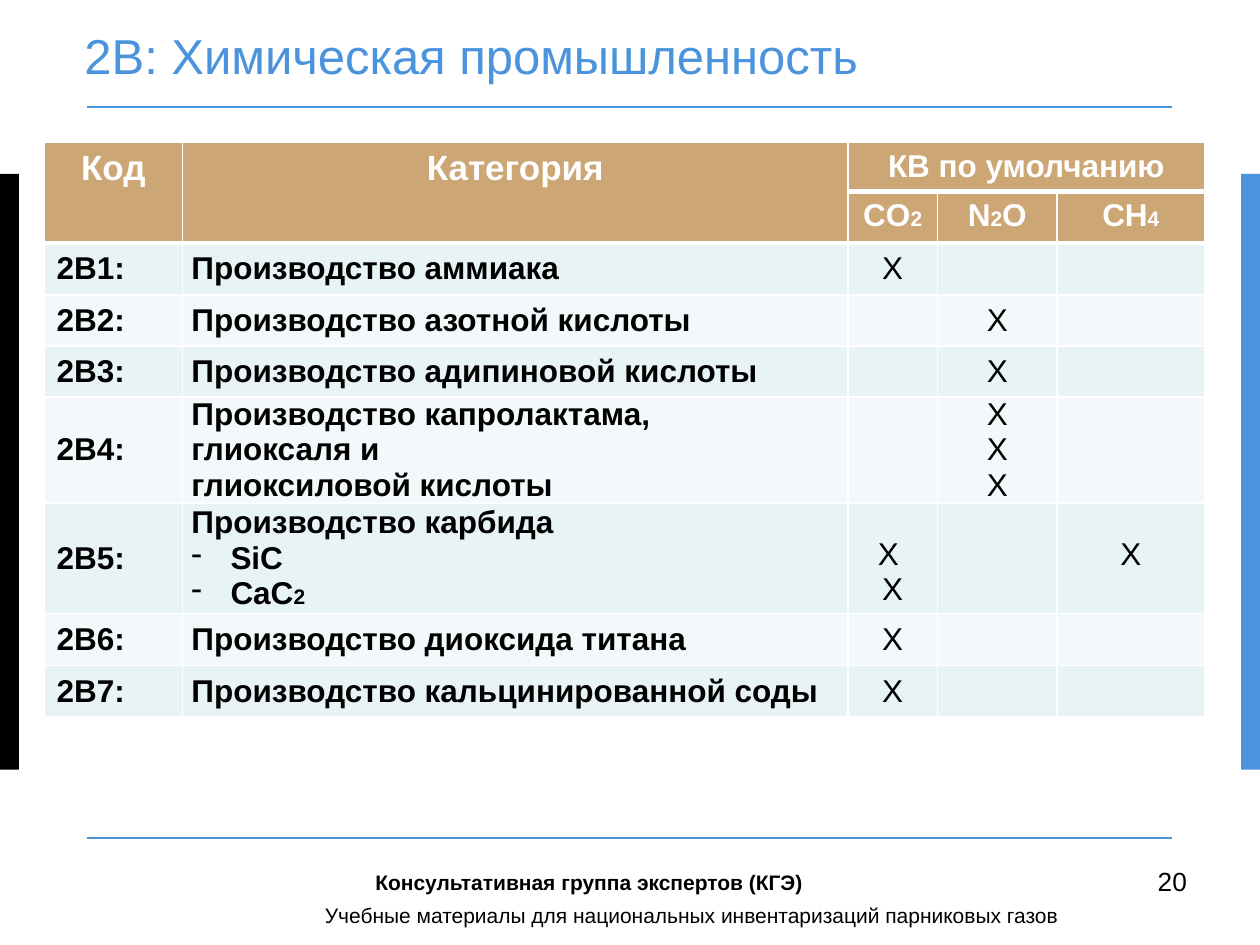
from dataclasses import dataclass

from lxml import etree
from pptx import Presentation
from pptx import util as u
from pptx.dml.color import RGBColor
from pptx.enum import shapes, text
from pptx.oxml.ns import qn


@dataclass(frozen=True)
class Theme:
    font: str = "Arial"
    blue: str = "4B93DC"
    black: str = "000000"
    white: str = "FFFFFF"
    head: str = "CCA674"
    bands: tuple = ("E7F3F4", "F3F9FA")
    title: int = 28
    label: int = 20
    body: int = 18
    number: int = 15
    small: int = 12


T = Theme()
W, H = u.Inches(10), u.Inches(7.5)
COL, ROW = W / 100, H / 75
LEFT, MID = text.PP_ALIGN.LEFT, text.PP_ALIGN.CENTER
TOP, MIDDLE = text.MSO_ANCHOR.TOP, text.MSO_ANCHOR.MIDDLE
WIDE = (0.1, 0.05, 0.1, 0.05)
TIGHT = (0.07, 0, 0.07, 0)

COLUMNS = (11, 52.8, 7.1, 9.5, 11.7)
ROWS = (3.9, 3.9, 4.1, 3.9, 4, 8.4, 8.8, 4.1, 4.1)
HEADER = (
    ("Код", "Категория", "КВ по умолчанию", "", ""),
    ("", "", "CO_2", "N_2_O", "CH_4"),
)
CATEGORIES = (
    ("2B1:", "Производство аммиака", "X", "", ""),
    ("2B2:", "Производство азотной кислоты", "", "X", ""),
    ("2B3:", "Производство адипиновой кислоты", "", "X", ""),
    ("2B4:", "Производство капролактама,\nглиоксаля и\nглиоксиловой кислоты",
     "", "X\nX\nX", ""),
    ("2B5:", "Производство карбида\n- SiC\n- CaC_2", "X \nX", "", "X"),
    ("2B6:", "Производство диоксида титана", "X", "", ""),
    ("2B7:", "Производство кальцинированной соды", "X", "", ""),
)
CARBIDE_INSETS = {2: (0.1, 0.22, 0.1, 0), 4: (0.07, 0.27, 0.07, 0)}


def place(box):
    x, y, w, h = box
    return [u.Emu(round(v)) for v in (x * COL, y * ROW, w * COL, h * ROW)]


def assign(obj, values):
    for name, value in values.items():
        setattr(obj, name, value)


def margins(insets):
    names = ("margin_left", "margin_top", "margin_right", "margin_bottom")
    return dict(zip(names, map(u.Inches, insets)))


def write(p, line, size, color, bold=False, align=LEFT):
    p.alignment = align
    for i, part in enumerate(line.split("_")):
        if part:
            r = p.add_run()
            r.text = part
            assign(r.font, {"name": T.font, "bold": bold,
                            "size": u.Pt(T.small if i % 2 else size)})
            r.font.color.rgb = RGBColor.from_string(color)


def bullet(p):
    pPr = p._p.get_or_add_pPr()
    pPr.set("marL", str(u.Inches(0.31)))
    pPr.set("indent", str(u.Inches(-0.31)))
    etree.SubElement(pPr, qn("a:buChar")).set("char", "-")


def border(cell, top, bottom):
    tcPr = cell._tc.get_or_add_tcPr()
    for side, width in (("L", 1), ("R", 1), ("T", top), ("B", bottom)):
        ln = etree.SubElement(tcPr, qn(f"a:ln{side}"), w=str(u.Pt(width)))
        fill = etree.SubElement(ln, qn("a:solidFill"))
        etree.SubElement(fill, qn("a:srgbClr"), val=T.white)


def fill_cell(cell, content, fill, insets, anchor, top, bottom, **style):
    border(cell, top, bottom)
    cell.fill.solid()
    cell.fill.fore_color.rgb = RGBColor.from_string(fill)
    assign(cell, {**margins(insets), "vertical_anchor": anchor})
    tf = cell.text_frame
    for i, line in enumerate(content.split("\n")):
        p = tf.add_paragraph() if i else tf.paragraphs[0]
        if line.startswith("- "):
            bullet(p)
            line = line[2:]
        write(p, line, **style)


def side_bar(s, box, color):
    sp = s.shapes.add_shape(shapes.MSO_SHAPE.RECTANGLE, *place(box))
    sp.shadow.inherit = False
    sp.fill.solid()
    sp.fill.fore_color.rgb = RGBColor.from_string(color)
    sp.line.fill.background()


def rule(s, box):
    x, y, w, h = place(box)
    ln = s.shapes.add_connector(shapes.MSO_CONNECTOR.STRAIGHT, x, y, x + w, y + h)
    ln.line.width = u.Pt(1)
    ln.line.color.rgb = RGBColor.from_string(T.blue)
    etree.SubElement(ln._element.spPr, qn("a:effectLst"))


def title(s, box, content):
    sp = s.shapes.title
    assign(sp, dict(zip(("left", "top", "width", "height"), place(box))))
    tf = sp.text_frame
    assign(tf, {**margins((0, 0, 0, 0)), "word_wrap": True,
                "vertical_anchor": MIDDLE, "auto_size": text.MSO_AUTO_SIZE.NONE})
    p = tf.paragraphs[0]
    p.line_spacing = u.Pt(15)
    write(p, content, T.title, T.blue)


def caption(s, box, content, size, bold=False):
    tf = s.shapes.add_textbox(*place(box)).text_frame
    tf.word_wrap = True
    write(tf.paragraphs[0], content, size, T.black, bold)


def category_table(s, box):
    x, y = box
    frame = s.shapes.add_table(len(ROWS), len(COLUMNS),
                               *place((x, y, sum(COLUMNS), sum(ROWS))))
    tbl = frame.table
    for column, width in zip(tbl.columns, COLUMNS):
        column.width = u.Emu(round(width * COL))
    for row, height in zip(tbl.rows, ROWS):
        row.height = u.Emu(round(height * ROW))
    for first, last in (((0, 0), (1, 0)), ((0, 1), (1, 1)), ((0, 2), (0, 4))):
        tbl.cell(*first).merge(tbl.cell(*last))

    for i, row in enumerate(HEADER):
        for j, content in enumerate(row):
            size = T.label if j < 2 else T.body
            fill_cell(tbl.cell(i, j), content, T.head, WIDE, TOP, 3 if i else 1, 3,
                      size=size, color=T.white, bold=True, align=MID)

    for i, row in enumerate(CATEGORIES):
        for j, content in enumerate(row):
            insets = WIDE if j in (0, 2) else TIGHT
            anchor = MIDDLE
            if row[0] == "2B5:":
                insets = CARBIDE_INSETS.get(j, insets)
                anchor = TOP if j == 4 else MIDDLE
            fill_cell(tbl.cell(i + len(HEADER), j), content, T.bands[i % 2],
                      insets, anchor, 1 if i else 3, 1, size=T.body,
                      color=T.black, bold=j < 2, align=LEFT if j < 2 else MID)


def frame_slide(s):
    side_bar(s, (0, 13.8, 1.5, 47.3), T.black)
    side_bar(s, (98.5, 13.8, 1.5, 47.3), T.blue)
    for y in (8.5, 66.5):
        rule(s, (6.9, y, 86.1, 0))


def footer(s, box):
    x, y = box
    caption(s, (x + 66.1, y, 4.7, 3.5), "20", T.number)
    caption(s, (x, y + 2.9, 61.2, 1.8),
            "Учебные материалы для национальных инвентаризаций парниковых газов",
            T.small)
    caption(s, (x + 4, y + 0.3, 40.9, 2.7),
            "Консультативная группа экспертов (КГЭ)", T.small, True)


def main():
    prs = Presentation()
    assign(prs, {"slide_width": W, "slide_height": H})
    s = prs.slides.add_slide(prs.slide_layouts[5])
    frame_slide(s)
    title(s, (6.7, 2.9, 86.6, 5.5), "2B: Химическая промышленность")
    category_table(s, (3.5, 11.3))
    footer(s, (24.8, 68.2))
    prs.save("out.pptx")


if __name__ == "__main__":
    main()
